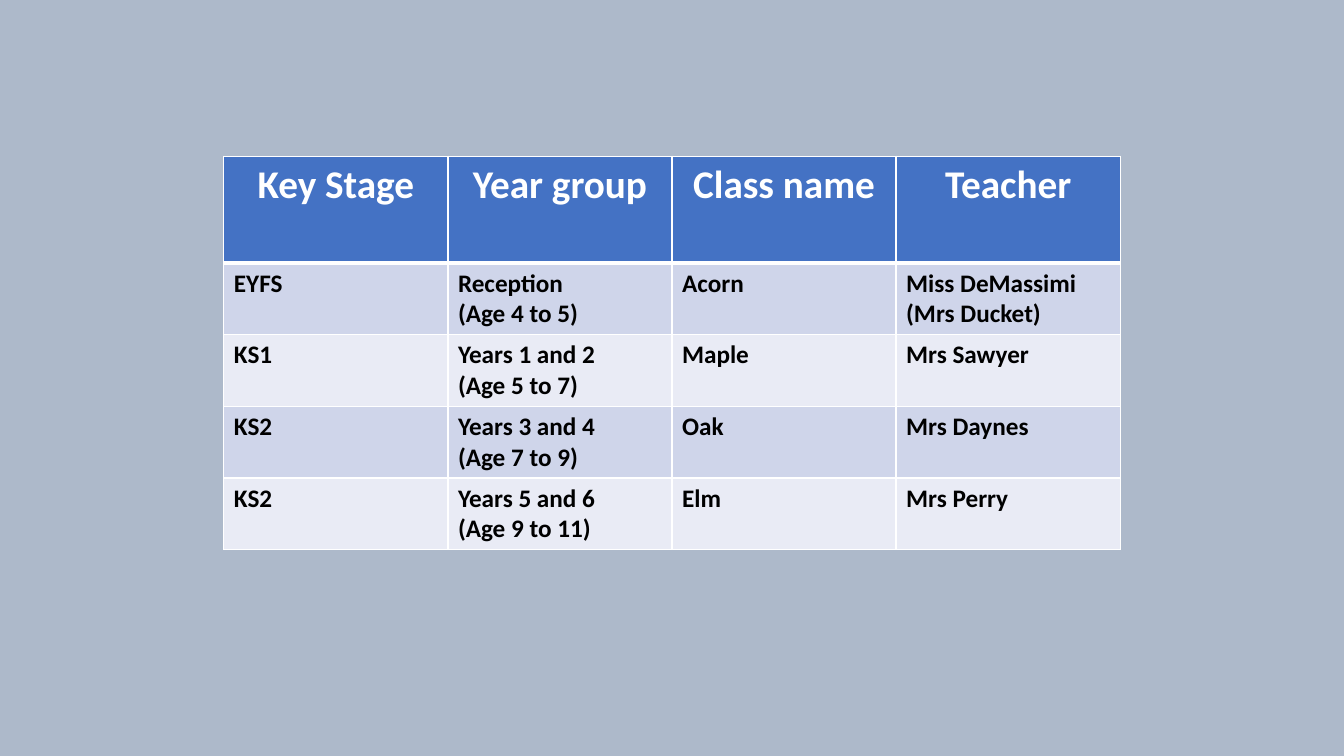
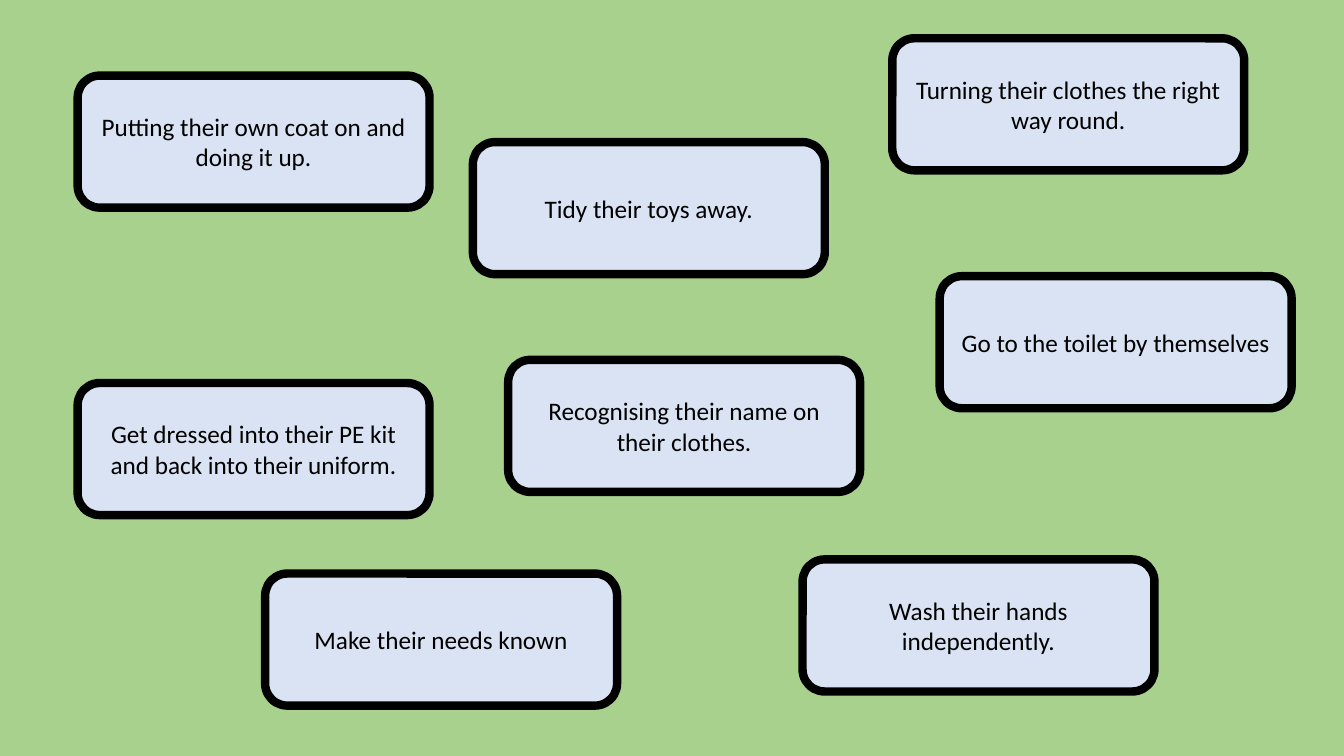
from lxml import etree
from pptx import Presentation
from pptx import util as u
from pptx.dml.color import RGBColor
from pptx.enum import shapes, text
from pptx.oxml.ns import qn

FONT = "Calibri"
COLORS = {
    "classes_background": "ADB9CA",
    "skills_background": "A9D18E",
    "header": "4472C4",
    "band_dark": "CFD5EA",
    "band_light": "E9EBF5",
    "card": "DAE3F3",
    "black": "000000",
    "white": "FFFFFF",
}

CLASS_ROWS = [
    ("Key Stage", "Year group", "Class name", "Teacher"),
    ("EYFS", "Reception\n(Age 4 to 5)", "Acorn", "Miss DeMassimi\n(Mrs Ducket)"),
    ("KS1", "Years 1 and 2\n(Age 5 to 7)", "Maple", "Mrs Sawyer"),
    ("KS2", "Years 3 and 4\n(Age 7 to 9)", "Oak", "Mrs Daynes"),
    ("KS2", "Years 5 and 6\n(Age 9 to 11)", "Elm", "Mrs Perry"),
]

CARD_SIZE = (3.49, 1.31)
SKILLS = [
    (0.77, 0.75, "Putting their own coat on and doing it up."),
    (5.04, 3.57, "Recognising their name on their clothes."),
    (8.85, 0.38, "Turning their clothes the right way round."),
    (0.77, 3.8, "Get dressed into their PE kit and back into their uniform."),
    (9.32, 2.74, "Go to the toilet by themselves"),
    (7.96, 5.55, "Wash their hands independently."),
    (2.63, 5.69, "Make their needs known"),
    (4.69, 1.41, "Tidy their toys away."),
]


def rgb(name):
    return RGBColor.from_string(COLORS[name])


def set_fill(fill, color):
    fill.solid()
    fill.fore_color.rgb = rgb(color)


def add_slide(presentation, background):
    slide = presentation.slides.add_slide(presentation.slide_layouts[6])
    set_fill(slide.background.fill, background)
    return slide


def write(frame, content, size, color, bold=False, align=text.PP_ALIGN.LEFT):
    frame.text = content
    for paragraph in frame.paragraphs:
        paragraph.alignment = align
        font = paragraph.font
        font.name, font.size, font.bold = FONT, u.Pt(size), bold
        font.color.rgb = rgb(color)


def set_borders(cell, color, top=1, bottom=1):
    # Border lines come before the fill in the cell properties
    properties = cell._tc.get_or_add_tcPr()
    widths = {"a:lnL": 1, "a:lnR": 1, "a:lnT": top, "a:lnB": bottom}
    for index, (tag, width) in enumerate(widths.items()):
        line = etree.Element(qn(tag), w=str(u.Pt(width)))
        fill = etree.SubElement(line, qn("a:solidFill"))
        etree.SubElement(fill, qn("a:srgbClr"), val=COLORS[color])
        properties.insert(index, line)


def add_class_table(slide, left, top, width, header_height, row_height):
    row_count, column_count = len(CLASS_ROWS), len(CLASS_ROWS[0])
    height = header_height + row_height * (row_count - 1)
    table = slide.shapes.add_table(
        row_count, column_count,
        u.Inches(left), u.Inches(top), u.Inches(width), u.Inches(height)).table
    for column in table.columns:
        column.width = u.Inches(width / column_count)

    for row, values in enumerate(CLASS_ROWS):
        is_header = row == 0
        table.rows[row].height = u.Inches(header_height if is_header else row_height)
        for column, value in enumerate(values):
            cell = table.cell(row, column)
            if is_header:
                set_fill(cell.fill, "header")
                write(cell.text_frame, value, 28, "white", True, text.PP_ALIGN.CENTER)
            else:
                set_fill(cell.fill, "band_dark" if row % 2 else "band_light")
                write(cell.text_frame, value, 18, "black", True)
            set_borders(cell, "white", top=3 if row == 1 else 1,
                        bottom=3 if is_header else 1)


def add_skill_card(slide, left, top, width, height, content):
    card = slide.shapes.add_shape(
        shapes.MSO_SHAPE.ROUNDED_RECTANGLE,
        u.Inches(left), u.Inches(top), u.Inches(width), u.Inches(height))
    card.shadow.inherit = False
    set_fill(card.fill, "card")
    card.line.color.rgb = rgb("black")
    card.line.width = u.Pt(6)
    frame = card.text_frame
    frame.word_wrap = True
    frame.vertical_anchor = text.MSO_ANCHOR.MIDDLE
    write(frame, content, 18, "black", align=text.PP_ALIGN.CENTER)


def main():
    presentation = Presentation()
    presentation.slide_width = u.Inches(13.33)
    presentation.slide_height = u.Inches(7.5)

    # Classes and teachers
    slide = add_slide(presentation, "classes_background")
    add_class_table(slide, 2.22, 1.55, 8.89, 1.06, 0.71)

    # Skills for independence
    slide = add_slide(presentation, "skills_background")
    for left, top, content in SKILLS:
        add_skill_card(slide, left, top, *CARD_SIZE, content)

    presentation.save("out.pptx")


if __name__ == "__main__":
    main()
